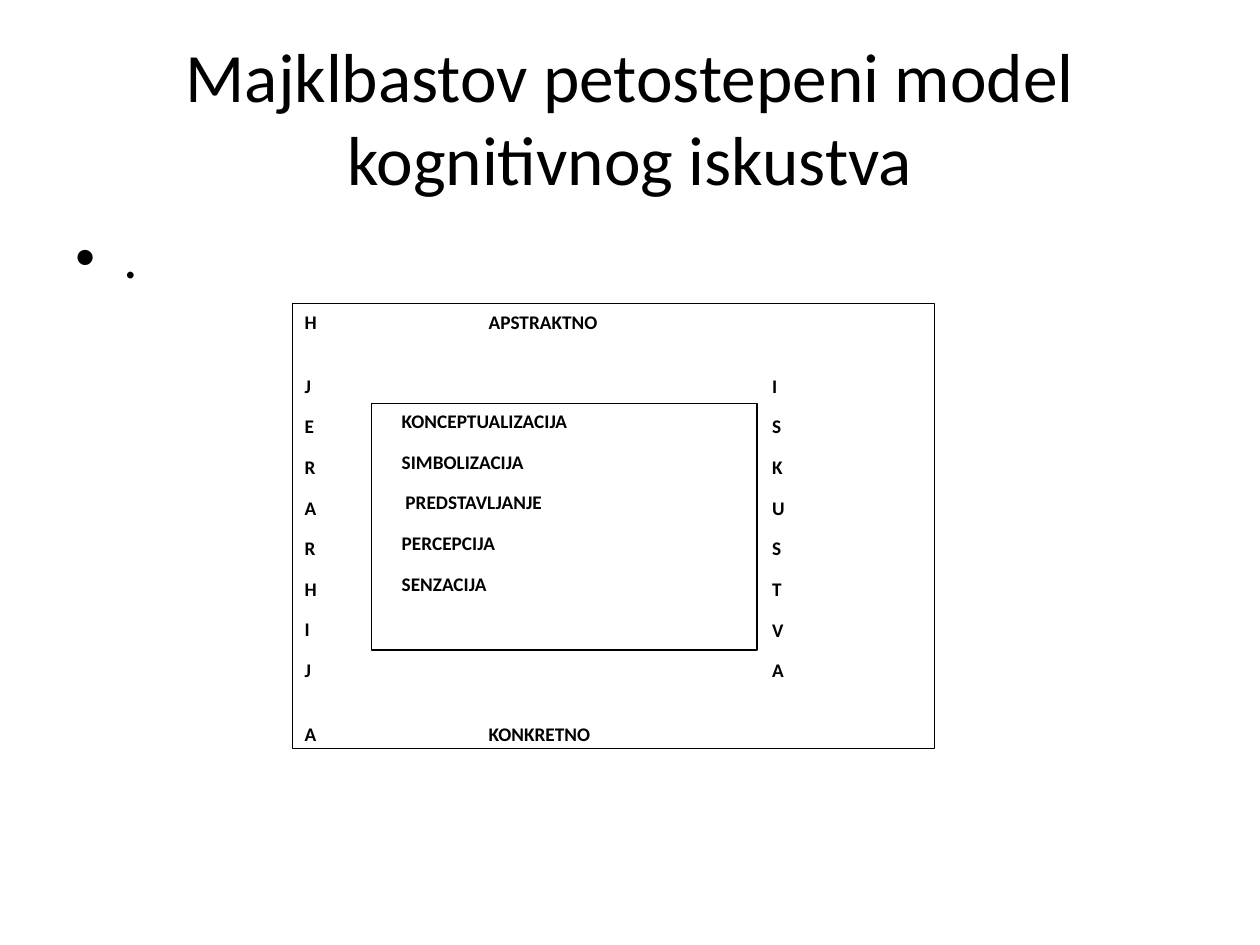
"""Build the slide on the five-step model of cognitive experience."""
import pptx
import pptx.dml.color
import pptx.enum.shapes
import pptx.enum.text
import pptx.oxml.ns
import pptx.util
from lxml import etree

Inches = pptx.util.Inches
Pt = pptx.util.Pt
BLACK = pptx.dml.color.RGBColor(0, 0, 0)
WHITE = pptx.dml.color.RGBColor(255, 255, 255)
ALIGN = pptx.enum.text.PP_ALIGN
ANCHOR = pptx.enum.text.MSO_ANCHOR
qn = pptx.oxml.ns.qn

STEPS = ["KONCEPTUALIZACIJA", "SIMBOLIZACIJA", "PREDSTAVLJANJE", "PERCEPCIJA", "SENZACIJA"]
GAP, WIDE_GAP = 10, 23.4


def write(p, text, size=11, bold=False, align=ALIGN.LEFT, after=0, left=0, hang=0, bullet=None):
    p.alignment = align
    p.space_after = Pt(after)
    pPr = p._p.get_or_add_pPr()
    pPr.set("marL", str(Inches(left)))
    pPr.set("indent", str(-Inches(hang)))
    if bullet:
        etree.SubElement(pPr, qn("a:buFont"), typeface="Arial")
        etree.SubElement(pPr, qn("a:buChar"), char=bullet)
    r = p.add_run()
    r.text = text
    r.font.name = "Calibri"
    r.font.size = Pt(size)
    r.font.bold = bold
    r.font.color.rgb = BLACK


class SlideBuilder:
    def __init__(self, s):
        self.s = s
        self.line_width = Pt(0.75)

    def fill_text(self, sp, lines, anchor=ANCHOR.TOP):
        tf = sp.text_frame
        tf.word_wrap = True
        tf.vertical_anchor = anchor
        for i, (text, style) in enumerate(lines):
            write(tf.add_paragraph() if i else tf.paragraphs[0], text, **style)

    def text(self, x, y, w, h, lines, anchor=ANCHOR.TOP):
        sp = self.s.shapes.add_textbox(Inches(x), Inches(y), Inches(w), Inches(h))
        self.fill_text(sp, lines, anchor)

    def box(self, x, y, w, h, lines):
        sp = self.s.shapes.add_shape(pptx.enum.shapes.MSO_SHAPE.RECTANGLE,
                                     Inches(x), Inches(y), Inches(w), Inches(h))
        sp.shadow.inherit = False
        sp.fill.solid()
        sp.fill.fore_color.rgb = WHITE
        sp.line.color.rgb = BLACK
        sp.line.width = self.line_width
        self.fill_text(sp, lines)


def main():
    prs = pptx.Presentation()
    prs.slide_width, prs.slide_height = Inches(10), Inches(7.5)
    b = SlideBuilder(prs.slides.add_slide(prs.slide_layouts[6]))
    label = dict(bold=True, after=GAP)
    spaced = dict(bold=True, after=WIDE_GAP)

    b.text(0.5, 0.3, 9, 1.25, [("Majklbastov petostepeni model kognitivnog iskustva",
                                dict(size=39.6, align=ALIGN.CENTER))], ANCHOR.MIDDLE)
    b.text(0.5, 1.72, 8.95, 4.98, [(".", dict(size=32, left=0.38, hang=0.38, bullet="•"))])

    b.box(2.32, 2.41, 5.1, 3.53,
          [("H", spaced), *((letter, label) for letter in "JERARHI"), ("J", spaced), ("A", label)])
    for pole, y in (("APSTRAKTNO", 2.41), ("KONKRETNO", 5.68)):
        b.text(3.78, y, 1.3, 0.26, [(pole, label)])
    b.text(6.03, 2.92, 0.4, 2.6, [(letter, label) for letter in "ISKUSTVA"])

    b.box(2.95, 3.2, 3.06, 1.96,
          [(step, dict(label, left=0.17 if step == "PREDSTAVLJANJE" else 0.14))
           for step in STEPS])
    prs.save("out.pptx")


if __name__ == "__main__":
    main()
